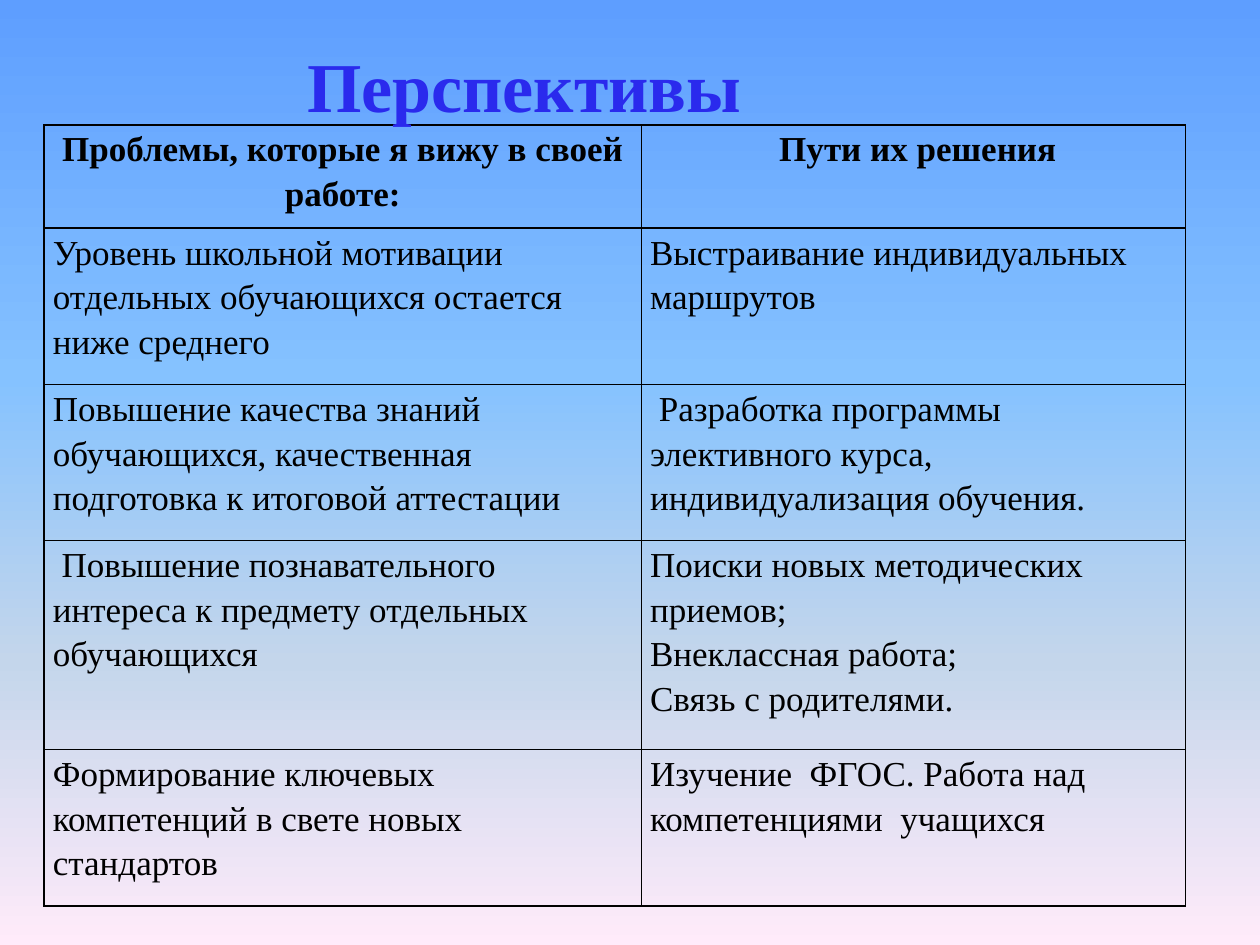
from lxml import etree
from pptx import Presentation
from pptx.dml.color import RGBColor
from pptx.enum.text import MSO_AUTO_SIZE, PP_ALIGN
from pptx.oxml.ns import qn
from pptx.util import Inches, Pt

CENTER, LEFT = PP_ALIGN.CENTER, PP_ALIGN.LEFT
GROW = MSO_AUTO_SIZE.SHAPE_TO_FIT_TEXT
COLORS = {"text": "000000", "border": "000000", "title": "2A2AED"}
BACKGROUND_STOPS = {0: "5E9EFF", 40: "85C2FF", 70: "C4D6EB", 100: "FFEBFA"}
BORDER_WIDTH = Pt(1)
COLUMN_WIDTHS = [4.74, 4.32]
ROW_HEIGHTS = [0.82, 1.24, 1.24, 1.66, 1.24]
ROWS = [
    ("Проблемы, которые я вижу в своей работе:", " Пути их решения"),
    ("Уровень школьной мотивации  отдельных обучающихся остается ниже среднего",
     "Выстраивание индивидуальных маршрутов"),
    ("Повышение качества знаний обучающихся, качественная подготовка к итоговой аттестации",
     " Разработка программы элективного курса,  индивидуализация обучения."),
    (" Повышение познавательного интереса к предмету отдельных обучающихся",
     "Поиски новых методических приемов;\nВнеклассная работа;\nСвязь с родителями."),
    ("Формирование ключевых компетенций в свете новых стандартов",
     "Изучение  ФГОС. Работа над компетенциями  учащихся"),
]
CELL_FORMAT = {"margin_left": Inches(0.07), "margin_right": Inches(0.07),
               "margin_top": 0, "margin_bottom": 0}


def write_text(frame, text, color, alignment, spacing, font_format):
    frame.text = text
    for paragraph in frame.paragraphs:
        paragraph.alignment = alignment
        paragraph.line_spacing = spacing
        for run in paragraph.runs:
            run.font.color.rgb = RGBColor.from_string(COLORS[color])
            for name, value in font_format.items():
                setattr(run.font, name, value)


def add_color(parent, color):
    etree.SubElement(parent, qn("a:srgbClr"), val=color)


presentation = Presentation()
presentation.slide_width = Inches(10)
presentation.slide_height = Inches(7.5)
slide = presentation.slides.add_slide(presentation.slide_layouts[6])

background = slide.background.fill
background.gradient()
background.gradient_angle = 270
stop_list = next(slide.element.iter(qn("a:gsLst")))
for stop in list(stop_list):
    stop_list.remove(stop)
for position, color in BACKGROUND_STOPS.items():
    add_color(etree.SubElement(stop_list, qn("a:gs"), pos=str(position * 1000)), color)

table = slide.shapes.add_table(
    len(ROWS), len(COLUMN_WIDTHS), Inches(0.35), Inches(0.99),
    Inches(sum(COLUMN_WIDTHS)), Inches(sum(ROW_HEIGHTS))).table
table.first_row = False
table.horz_banding = False
for column, width in zip(table.columns, COLUMN_WIDTHS):
    column.width = Inches(width)
for row, height in zip(table.rows, ROW_HEIGHTS):
    row.height = Inches(height)

for row_index, texts in enumerate(ROWS):
    header = row_index == 0
    for column_index, text in enumerate(texts):
        cell = table.cell(row_index, column_index)
        for name, value in CELL_FORMAT.items():
            setattr(cell, name, value)
        write_text(cell.text_frame, text, "text", CENTER if header else LEFT, 1.15,
                   {"name": "Times New Roman", "size": Pt(20), "bold": header})
        properties = cell._tc.get_or_add_tcPr()
        for side in ("lnL", "lnR", "lnT", "lnB"):
            line = etree.SubElement(properties, qn(f"a:{side}"), w=str(BORDER_WIDTH))
            add_color(etree.SubElement(line, qn("a:solidFill")), COLORS["border"])
        cell.fill.background()

title = slide.shapes.add_textbox(Inches(2.32), Inches(0.29), Inches(3.68), Inches(0.77))
title.text_frame.word_wrap = False
title.text_frame.auto_size = GROW
write_text(title.text_frame, "Перспективы", "title", CENTER, 1.0,
           {"name": "Times New Roman", "size": Pt(40), "bold": True})

presentation.save("out.pptx")
